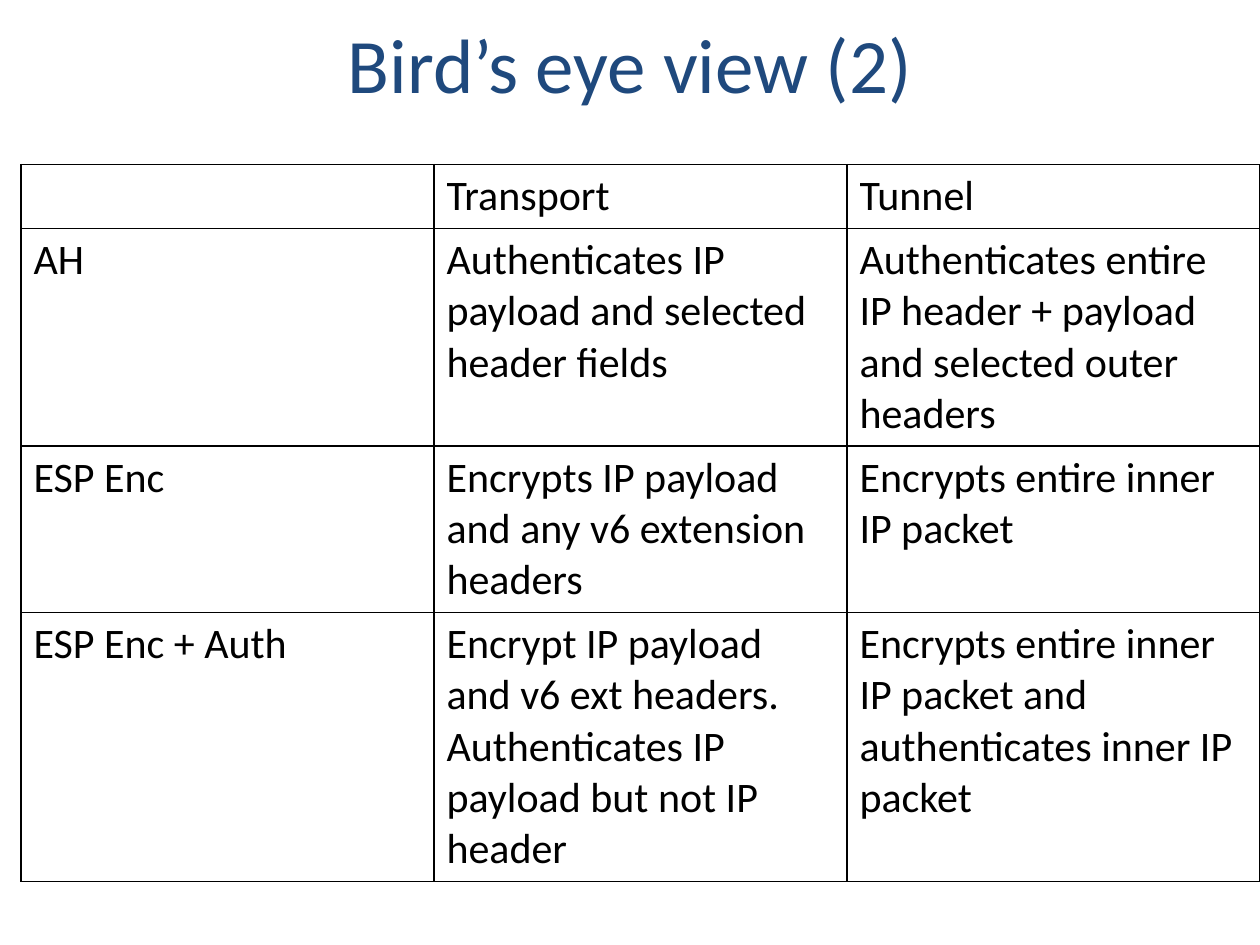
from lxml import etree
from pptx import Presentation
from pptx.dml.color import RGBColor
from pptx.enum.text import MSO_ANCHOR, PP_ALIGN
from pptx.oxml.ns import qn
from pptx.util import Pt

CENTER = PP_ALIGN.CENTER
MIDDLE = MSO_ANCHOR.MIDDLE
TITLE_ONLY = 5

NAVY = RGBColor(0x1F, 0x49, 0x7D)
BLACK = RGBColor(0x00, 0x00, 0x00)

MODES = [
    ["", "Transport", "Tunnel"],
    ["AH",
     "Authenticates IP payload and selected header fields",
     "Authenticates entire IP header + payload and selected outer headers"],
    ["ESP Enc",
     "Encrypts IP payload and any v6 extension headers",
     "Encrypts entire inner IP packet"],
    ["ESP Enc + Auth",
     "Encrypt IP payload and v6 ext headers. Authenticates IP payload "
     "but not IP header",
     "Encrypts entire inner IP packet and authenticates inner IP packet"],
]


class SlideBuilder:
    """Holds the text style and the slide being filled."""

    font_name = "Calibri"
    title_size = 44
    body_size = 24
    border_width = 1

    def __init__(self, slide):
        self.slide = slide

    def style(self, paragraph, size, color):
        paragraph.font.name = self.font_name
        paragraph.font.size = Pt(size)
        paragraph.font.color.rgb = color

    def title(self, text, left, top, width, height):
        title = self.slide.shapes.title
        title.left, title.top = Pt(left), Pt(top)
        title.width, title.height = Pt(width), Pt(height)
        frame = title.text_frame
        frame.text = text
        frame.vertical_anchor = MIDDLE
        heading = frame.paragraphs[0]
        heading.alignment = CENTER
        self.style(heading, self.title_size, NAVY)

    def border(self, cell):
        """Draw all four edges; call before the cell gets its fill."""
        properties = cell._tc.get_or_add_tcPr()
        for edge in ("a:lnL", "a:lnR", "a:lnT", "a:lnB"):
            line = etree.SubElement(properties, qn(edge),
                                    w=str(Pt(self.border_width)))
            fill = etree.SubElement(line, qn("a:solidFill"))
            etree.SubElement(fill, qn("a:srgbClr"), val=str(BLACK))

    def table(self, rows, left, top, width, row_height):
        """Add a grid of equal columns; rows grow to fit their text."""
        frame = self.slide.shapes.add_table(
            len(rows), len(rows[0]), Pt(left), Pt(top),
            Pt(width), Pt(row_height * len(rows)))
        grid = frame.table
        grid.first_row = grid.horz_banding = False
        for r, row in enumerate(rows):
            for c, text in enumerate(row):
                cell = grid.cell(r, c)
                self.border(cell)
                cell.fill.background()
                cell.text = text
                self.style(cell.text_frame.paragraphs[0],
                           self.body_size, BLACK)


def main():
    deck = Presentation()
    deck.slide_width, deck.slide_height = Pt(720), Pt(540)
    builder = SlideBuilder(
        deck.slides.add_slide(deck.slide_layouts[TITLE_ONLY]))
    builder.title("Bird’s eye view (2)", 36, 0, 648, 72)
    builder.table(MODES, left=12, top=94, width=708, row_height=29.5)
    deck.save("out.pptx")


if __name__ == "__main__":
    main()
